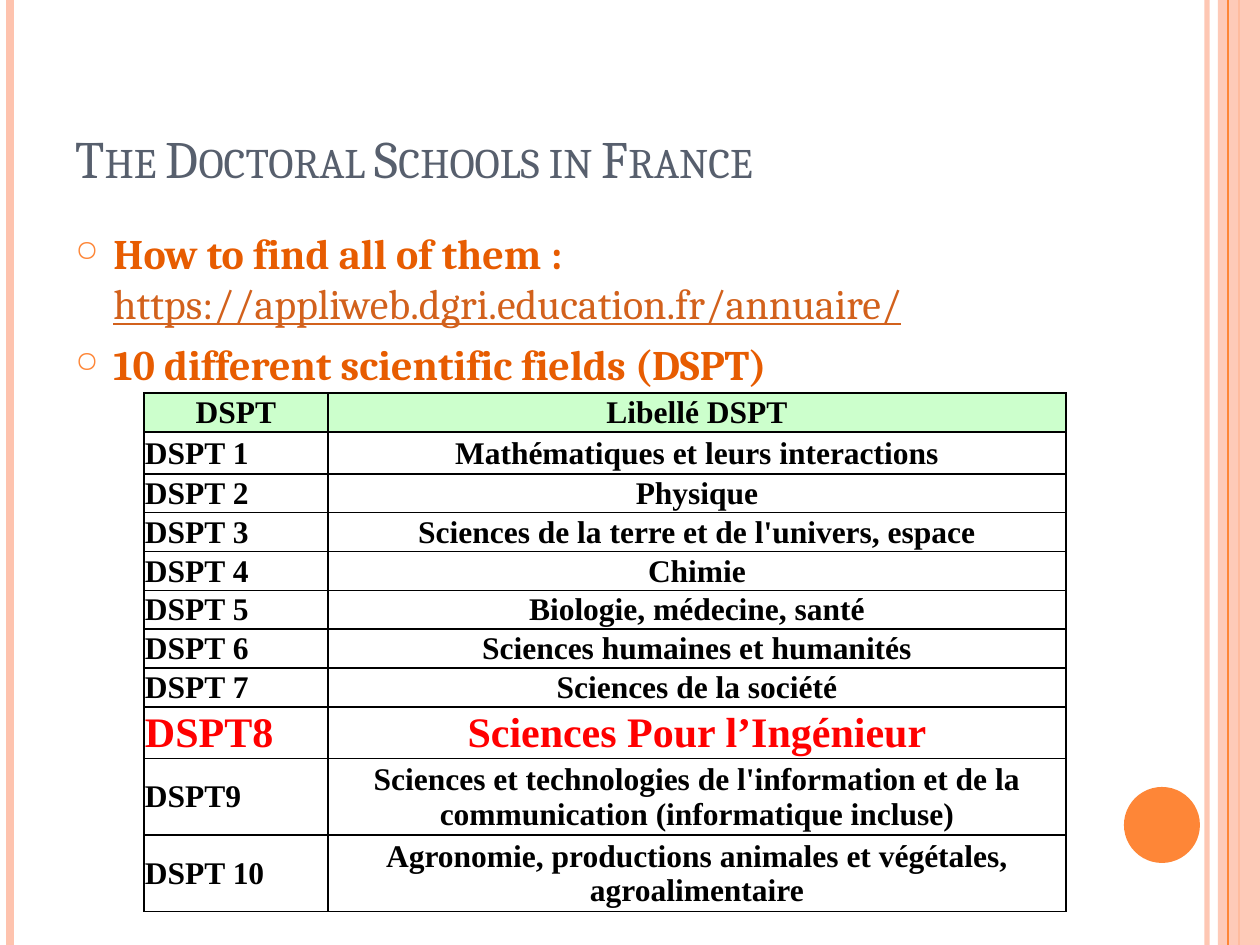
from lxml import etree
from pptx import Presentation
from pptx.dml.color import RGBColor
from pptx.enum.shapes import MSO_CONNECTOR, MSO_SHAPE
from pptx.enum.text import MSO_ANCHOR, PP_ALIGN
from pptx.oxml.ns import qn
from pptx.util import Pt

STRAIGHT = MSO_CONNECTOR.STRAIGHT
RECTANGLE, OVAL = MSO_SHAPE.RECTANGLE, MSO_SHAPE.OVAL
LEFT, CENTER = PP_ALIGN.LEFT, PP_ALIGN.CENTER
MIDDLE, BOTTOM = MSO_ANCHOR.MIDDLE, MSO_ANCHOR.BOTTOM

ORANGE = RGBColor(0xFE, 0x86, 0x37)
PEACH = RGBColor(0xFE, 0xC3, 0xAE)
SLATE = RGBColor(0x57, 0x5F, 0x6D)
EMPHASIS = RGBColor(0xE7, 0x5C, 0x01)
ADDRESS = RGBColor(0xD2, 0x61, 0x1C)
MINT = RGBColor(0xCC, 0xFF, 0xCC)
BLACK = RGBColor(0, 0, 0)
RED = RGBColor(0xFF, 0, 0)

SLIDE_W, SLIDE_H = 1260, 945
HEADING_FONT, TABLE_FONT = "Cambria", "Times New Roman"

HIGHLIGHTED = "DSPT8"
FIELDS = [  # code, label, row height
    ("DSPT", "Libellé DSPT", 36),
    ("DSPT 1", "Mathématiques et leurs interactions", 42),
    ("DSPT 2", "Physique", 36),
    ("DSPT 3", "Sciences de la terre et de l'univers, espace", 36),
    ("DSPT 4", "Chimie", 36),
    ("DSPT 5", "Biologie, médecine, santé", 36),
    ("DSPT 6", "Sciences humaines et humanités", 36),
    ("DSPT 7", "Sciences de la société", 36),
    (HIGHLIGHTED, "Sciences Pour l’Ingénieur", 47),
    ("DSPT9", "Sciences et technologies de l'information et de la "
              "communication (informatique incluse)", 70),
    ("DSPT 10", "Agronomie, productions animales et végétales, "
                "agroalimentaire", 70),
]


def px(length):
    return round(length * 914400 / 126)


def add_child(parent, tag, **attributes):
    return etree.SubElement(parent, qn(tag), attributes)


def set_opacity(properties, percent):
    color = next(properties.iter(qn("a:srgbClr")))
    add_child(color, "a:alpha", val=str(percent * 1000))


def add_stripe(slide, x, top, height, color, width, opacity=100):
    stripe = slide.shapes.add_connector(
        STRAIGHT, px(x), px(top), px(x), px(top + height))
    stripe.line.color.rgb = color
    stripe.line.width = Pt(width)
    properties = stripe._element.spPr
    if opacity < 100:
        set_opacity(properties, opacity)
    add_child(properties, "a:effectLst")


def add_plain_shape(slide, kind, box, color):
    shape = slide.shapes.add_shape(kind, *map(px, box))
    shape.shadow.inherit = False
    shape.fill.solid()
    shape.fill.fore_color.rgb = color
    shape.line.fill.background()
    return shape


def add_frame(slide, left, top, width, height):
    """Vertical stripes on both edges, and the disc at the lower right."""
    right = left + width
    add_stripe(slide, right - 53, top, height, PEACH, 3, opacity=93)
    add_stripe(slide, left + 10, top, height, PEACH, 4.5)
    add_stripe(slide, right - 21, top, height, ORANGE, 1.5)
    band = add_plain_shape(slide, RECTANGLE, (right - 42, top, 42, height), PEACH)
    set_opacity(band._element.spPr, 87)
    add_stripe(slide, right - 32, top, height, ORANGE, 0.75)
    add_plain_shape(slide, OVAL, (right - 136, top + height - 158, 76, 76), ORANGE)


def add_text_frame(slide, box):
    frame = slide.shapes.add_textbox(*map(px, box)).text_frame
    frame.word_wrap = True
    return frame


def add_title(slide, *box):
    frame = add_text_frame(slide, box)
    frame.vertical_anchor = BOTTOM
    heading = frame.paragraphs[0]
    heading.font.name = HEADING_FONT
    heading.font.size = Pt(30)
    heading.font.color.rgb = SLATE
    title = heading.add_run()
    title.text = "The Doctoral Schools in France"
    title.font._element.set("cap", "small")


def start_bullet(point):
    point.space_before = Pt(6)
    properties = point._p.get_or_add_pPr()
    properties.set("marL", str(px(38)))
    properties.set("indent", str(-px(38)))
    add_child(add_child(properties, "a:buClr"), "a:srgbClr", val=str(ORANGE))
    add_child(properties, "a:buSzPct", val="70000")
    add_child(properties, "a:buChar", char="○")
    point.font.name = HEADING_FONT
    point.font.size = Pt(24)


def add_body(slide, *box):
    frame = add_text_frame(slide, box)
    search, fields = frame.paragraphs[0], frame.add_paragraph()
    for point, lead in ((search, "How to find all of them : "),
                        (fields, "10 different scientific fields (DSPT)")):
        start_bullet(point)
        run = point.add_run()
        run.text = lead
        run.font.bold = True
        run.font.color.rgb = EMPHASIS
    address = search.add_run()
    address.text = "https://appliweb.dgri.education.fr/annuaire/"
    address.font.underline = True
    address.font.color.rgb = ADDRESS


def add_borders(cell):
    properties = cell._tc.get_or_add_tcPr()
    for side in ("a:lnL", "a:lnR", "a:lnT", "a:lnB"):
        border = add_child(properties, side, w=str(Pt(1)))
        add_child(add_child(border, "a:solidFill"), "a:srgbClr", val=str(BLACK))


def fill_cell(cell, text, alignment, is_header, is_highlighted):
    add_borders(cell)
    if is_header:
        cell.fill.solid()
        cell.fill.fore_color.rgb = MINT
    else:
        cell.fill.background()
    cell.margin_left = cell.margin_right = cell.margin_top = px(1)
    cell.margin_bottom = 0
    cell.vertical_anchor = MIDDLE
    cell.text = text
    entry = cell.text_frame.paragraphs[0]
    entry.alignment = alignment
    entry.font.name = TABLE_FONT
    entry.font.bold = True
    entry.font.size = Pt(24 if is_highlighted else 18)
    entry.font.color.rgb = RED if is_highlighted else BLACK


def add_fields_table(slide, left, top, width):
    height = sum(row_height for *_, row_height in FIELDS)
    table = slide.shapes.add_table(
        len(FIELDS), 2, px(left), px(top), px(width), px(height)).table
    table.first_row = table.horz_banding = False
    code_width = width // 5
    table.columns[0].width = px(code_width)
    table.columns[1].width = px(width - code_width)
    for index, (code, label, row_height) in enumerate(FIELDS):
        table.rows[index].height = px(row_height)
        is_header, is_highlighted = index == 0, code == HIGHLIGHTED
        fill_cell(table.cell(index, 0), code, CENTER if is_header else LEFT,
                  is_header, is_highlighted)
        fill_cell(table.cell(index, 1), label, CENTER, is_header, is_highlighted)


def main():
    deck = Presentation()
    deck.slide_width, deck.slide_height = px(SLIDE_W), px(SLIDE_H)
    slide = deck.slides.add_slide(deck.slide_layouts[6])
    add_frame(slide, 0, 0, SLIDE_W, SLIDE_H)
    add_title(slide, 63, 38, 1029, 157)
    add_body(slide, 63, 221, 1029, 672)
    add_fields_table(slide, 144, 393, 922)
    deck.save("out.pptx")


if __name__ == "__main__":
    main()
